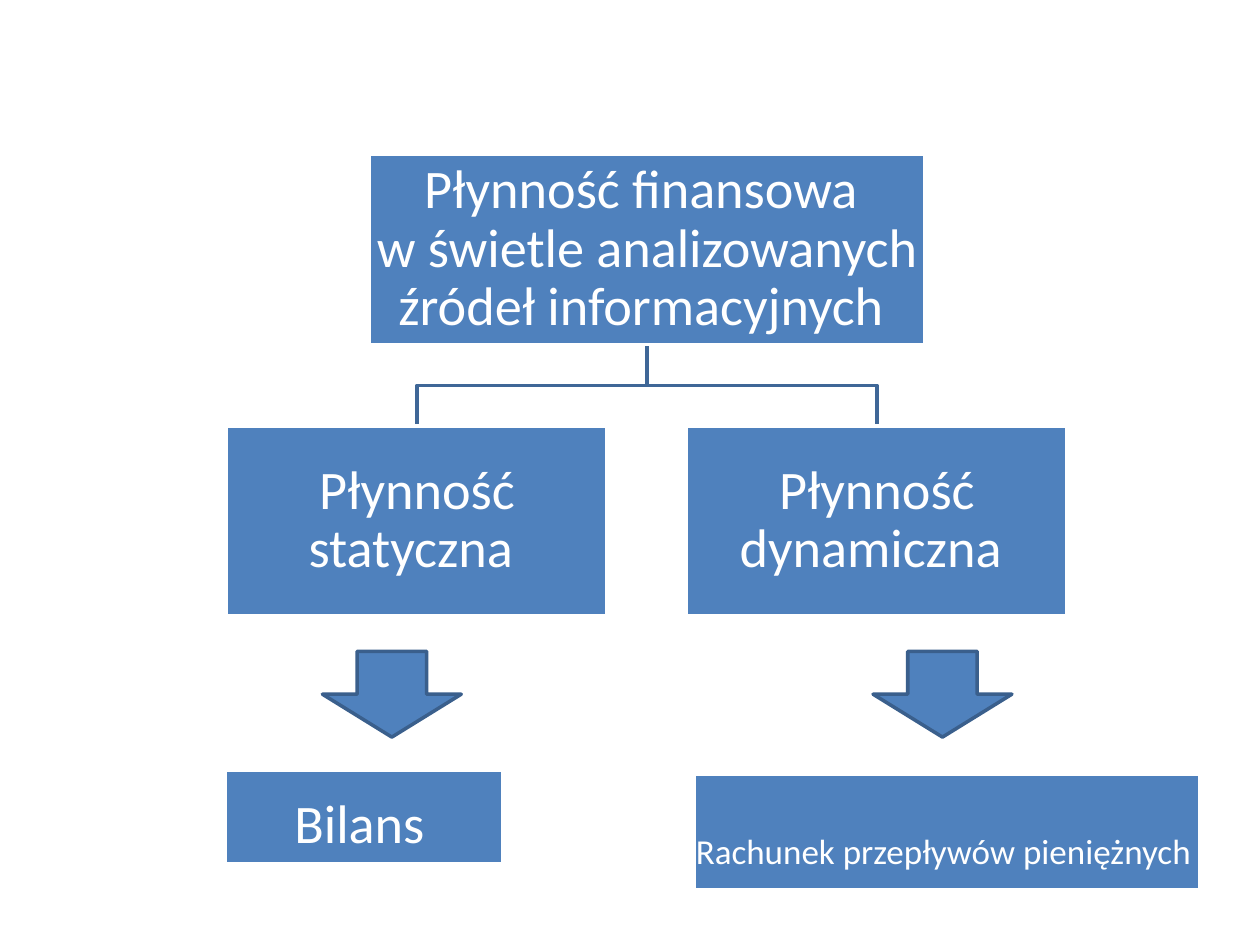
from dataclasses import dataclass

from pptx import Presentation
from pptx.dml.color import RGBColor
from pptx.enum.shapes import MSO_SHAPE
from pptx.enum.text import MSO_ANCHOR, PP_ALIGN
from pptx.util import Cm, Pt

BLUE, WHITE = "4F81BD", "FFFFFF"
BRANCH_LINE, ARROW_LINE = "3F6797", "3A5F8C"


@dataclass
class Box:
    """Hold a region in centimetres."""
    left: float
    top: float
    width: float
    height: float

    @property
    def centre(self):
        """Return the horizontal middle."""
        return self.left + self.width / 2


def colour(value):
    """Turn a hex string into a colour."""
    return RGBColor.from_string(value)


def add_block(page, kind, box, outline):
    """Place a blue preset shape with a two-point outline."""
    block = page.shapes.add_shape(
        kind, Cm(box.left), Cm(box.top), Cm(box.width), Cm(box.height))
    block.shadow.inherit = False
    block.fill.solid()
    block.fill.fore_color.rgb = colour(BLUE)
    block.line.color.rgb = colour(outline)
    block.line.width = Pt(2)
    return block


def add_label(page, box, text, size=31, insets=(0.05, 0.05, 0.05, 0.05)):
    """Place a rectangle with centred white text."""
    frame = add_block(page, MSO_SHAPE.RECTANGLE, box, WHITE).text_frame
    frame.word_wrap = True
    frame.vertical_anchor = MSO_ANCHOR.MIDDLE
    (frame.margin_left, frame.margin_top,
     frame.margin_right, frame.margin_bottom) = map(Cm, insets)
    para = frame.paragraphs[0]
    para.text = text
    para.alignment = PP_ALIGN.CENTER
    para.line_spacing = 0.9
    para.font.name = "Calibri"
    para.font.size = Pt(size)
    para.font.color.rgb = colour(WHITE)


def add_branch(page, parent, child):
    """Draw an elbow line from the parent's foot to the child's head."""
    start = parent.top + parent.height
    middle = (start + child.top) / 2
    builder = page.shapes.build_freeform(Cm(parent.centre), Cm(start))
    builder.add_line_segments(
        [(Cm(parent.centre), Cm(middle)), (Cm(child.centre), Cm(middle)),
         (Cm(child.centre), Cm(child.top))], close=False)
    branch = builder.convert_to_shape()
    branch.shadow.inherit = False
    branch.fill.background()
    branch.line.color.rgb = colour(BRANCH_LINE)
    branch.line.width = Pt(2)


def add_hierarchy(page, box):
    """Place the root label above its two linked children."""
    height, child_width = 3.83, 7.67
    root = Box(box.centre - 5.6, box.top, 11.2, height)
    child_top = box.top + box.height - height
    children = {
        "Płynność statyczna ": box.left,
        "Płynność dynamiczna ": box.left + box.width - child_width,
    }
    places = {text: Box(left, child_top, child_width, height)
              for text, left in children.items()}
    for place in places.values():
        add_branch(page, root, place)
    add_label(page, root, "Płynność finansowa \n"
              "w świetle analizowanych źródeł informacyjnych ")
    for text, place in places.items():
        add_label(page, place, text)


def add_sources(page, box):
    """Place the down arrows and the source label under each."""
    for left in (box.left + 1.95, box.left + 13.05):
        arrow = Box(left, box.top, 2.8, 1.73)
        add_block(page, MSO_SHAPE.DOWN_ARROW, arrow, ARROW_LINE)
    add_label(page, Box(box.left, box.top + 2.39, 5.59, 1.9), "Bilans",
              insets=(0.05, 0.4, 0.25, 0.05))
    add_label(page, Box(box.left + 9.45, box.top + 2.47, 10.19, 2.34),
              "Rachunek przepływów pieniężnych ", 20, (0, 0.9, 0.15, 0.05))


def main():
    """Build the slide and save it."""
    deck = Presentation()
    deck.slide_width, deck.slide_height = Cm(25.4), Cm(19.05)
    page = deck.slides.add_slide(deck.slide_layouts[6])
    add_hierarchy(page, Box(4.57, 3.12, 16.94, 9.3))
    add_sources(page, Box(4.55, 13.13, 19.64, 4.81))
    deck.save("out.pptx")


if __name__ == "__main__":
    main()
